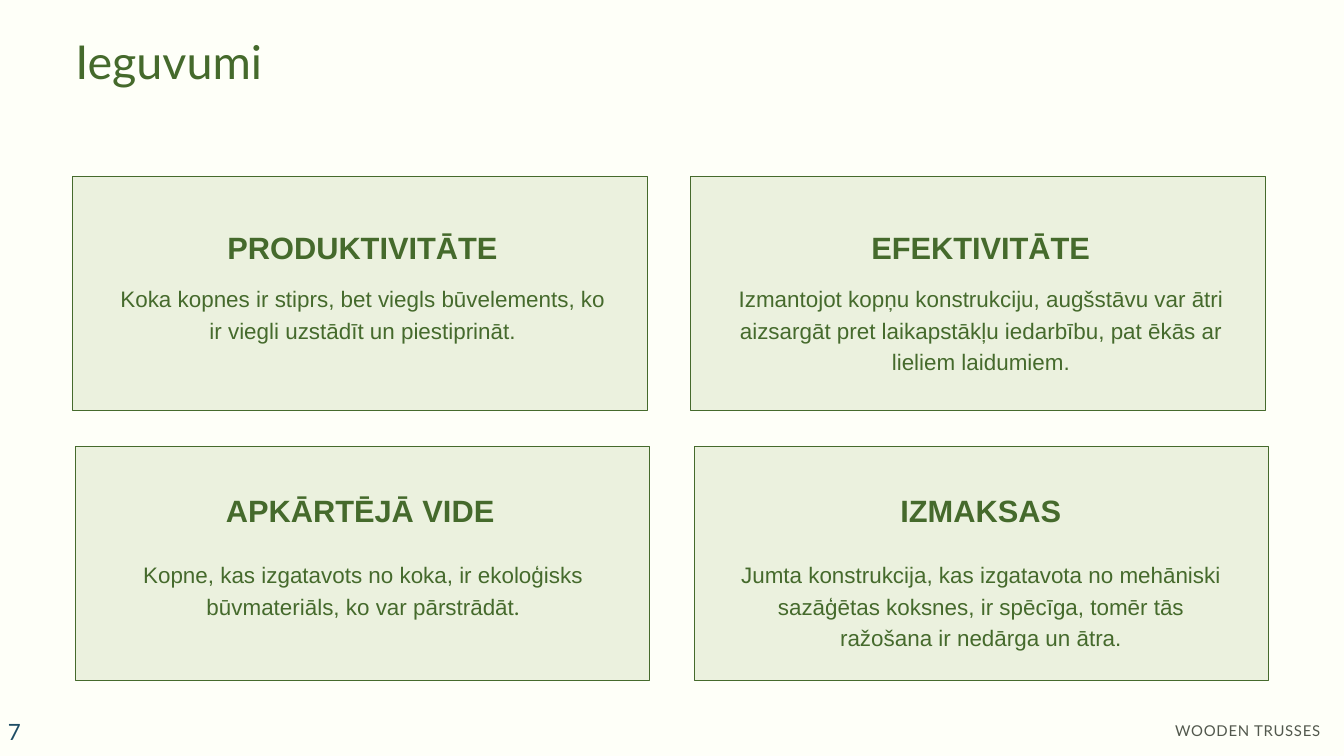
from pptx import Presentation
from pptx import util as u
from pptx.dml.color import RGBColor
from pptx.enum import shapes, text

PX = 9144
COLORS = {
    "background": "FEFFF8",
    "green": "456A2C",
    "card": "EBF1DE",
    "footer": "52584D",
    "number": "1E4D65",
}
CARD_WIDTH, CARD_HEIGHT = 855, 348
CARDS = [
    {"at": (108, 262), "heading": "PRODUKTIVITĀTE", "heading_box": (62, 76, 739, 54),
     "body": [("Koka kopnes ir stiprs, bet viegls būvelements, ko ir viegli "
               "uzstādīt un piestiprināt.", "Arial")],
     "body_box": (62, 156, 739, 91)},
    {"at": (1028, 262), "heading": "EFEKTIVITĀTE", "heading_box": (62, 76, 739, 54),
     "body": [("Izmantojot kopņu konstrukciju, augšstāvu var ātri aizsargāt pret "
               "laikapstākļu iedarbību, pat ēkās ar lieliem laidumiem.", "Arial")],
     "body_box": (62, 156, 739, 140)},
    {"at": (112, 664), "heading": "APKĀRTĒJĀ VIDE", "heading_box": (28, 66, 792, 54),
     "body": [("Kopne, kas izgatavots no koka, ir ekoloģisks būvmateriāls, "
               "ko var pārstrādāt", "Arial"), (".", "Lato")],
     "body_box": (32, 165, 792, 92)},
    {"at": (1033, 664), "heading": "IZMAKSAS", "heading_box": (57, 66, 739, 54),
     "body": [("Jumta konstrukcija, kas izgatavota no mehāniski sazāģētas koksnes, "
               "ir spēcīga, tomēr tās ražošana ir nedārga un ātra.", "Arial")],
     "body_box": (57, 165, 739, 140)},
]


def color(name):
    """Return the named colour."""
    return RGBColor.from_string(COLORS[name])


def emu(box):
    """Turn px lengths into EMU."""
    return [length * PX for length in box]


def add_text(slide, box, runs, size, ink="green", align=text.PP_ALIGN.LEFT,
             leading=None, bold=False, tracking=0, inset=0,
             anchor=text.MSO_ANCHOR.TOP):
    """Place one paragraph of (wording, font) runs in a box."""
    frame = slide.shapes.add_textbox(*emu(box)).text_frame
    frame.word_wrap = True
    frame.vertical_anchor = anchor
    frame.margin_left = frame.margin_right = inset * PX
    frame.margin_top = frame.margin_bottom = inset // 2 * PX
    paragraph = frame.paragraphs[0]
    paragraph.alignment = align
    if leading:
        paragraph.line_spacing = u.Pt(leading)
    for wording, font in runs:
        run = paragraph.add_run()
        run.text = wording
        run.font.name = font
        run.font.size = u.Pt(size)
        run.font.bold = bold
        run.font.color.rgb = color(ink)
        if tracking:
            run.font._element.set("spc", str(tracking))


def add_card(slide, card):
    """Place a framed benefit with its heading and body."""
    left, top = card["at"]
    frame = slide.shapes.add_shape(
        shapes.MSO_SHAPE.RECTANGLE, *emu((left, top, CARD_WIDTH, CARD_HEIGHT)))
    frame.shadow.inherit = False
    frame.fill.solid()
    frame.fill.fore_color.rgb = color("card")
    frame.line.color.rgb = color("green")
    frame.line.width = u.Pt(0.75)

    def inside(box):
        """Shift a box from the card's corner to the slide."""
        return (left + box[0], top + box[1], *box[2:])

    add_text(slide, inside(card["heading_box"]), [(card["heading"], "Arial")], 33,
             align=text.PP_ALIGN.CENTER, leading=41.2, bold=True)
    add_text(slide, inside(card["body_box"]), card["body"], 24,
             align=text.PP_ALIGN.CENTER, leading=33.6)


def add_footer(slide, box):
    """Place the page number and the deck name along the bottom."""
    left, top, width, height = box
    add_text(slide, (left, top, 233, height), [("7", "Lato")], 24, ink="number",
             tracking=120, inset=10, anchor=text.MSO_ANCHOR.MIDDLE)
    add_text(slide, (left + width - 832, top + 1, 832, 29), [("WOODEN TRUSSES", "Lato")],
             16, ink="footer", align=text.PP_ALIGN.RIGHT, leading=22.4, tracking=80)


def main():
    """Build the benefits slide."""
    presentation = Presentation()
    presentation.slide_width, presentation.slide_height = emu((2000, 1125))
    slide = presentation.slides.add_slide(presentation.slide_layouts[6])
    slide.background.fill.solid()
    slide.background.fill.fore_color.rgb = color("background")
    add_text(slide, (112, 39, 1771, 86), [("Ieguvumi", "Lato")], 50, leading=66.8)
    for card in CARDS:
        add_card(slide, card)
    add_footer(slide, (2, 1069, 1963, 40))
    presentation.save("out.pptx")


if __name__ == "__main__":
    main()
